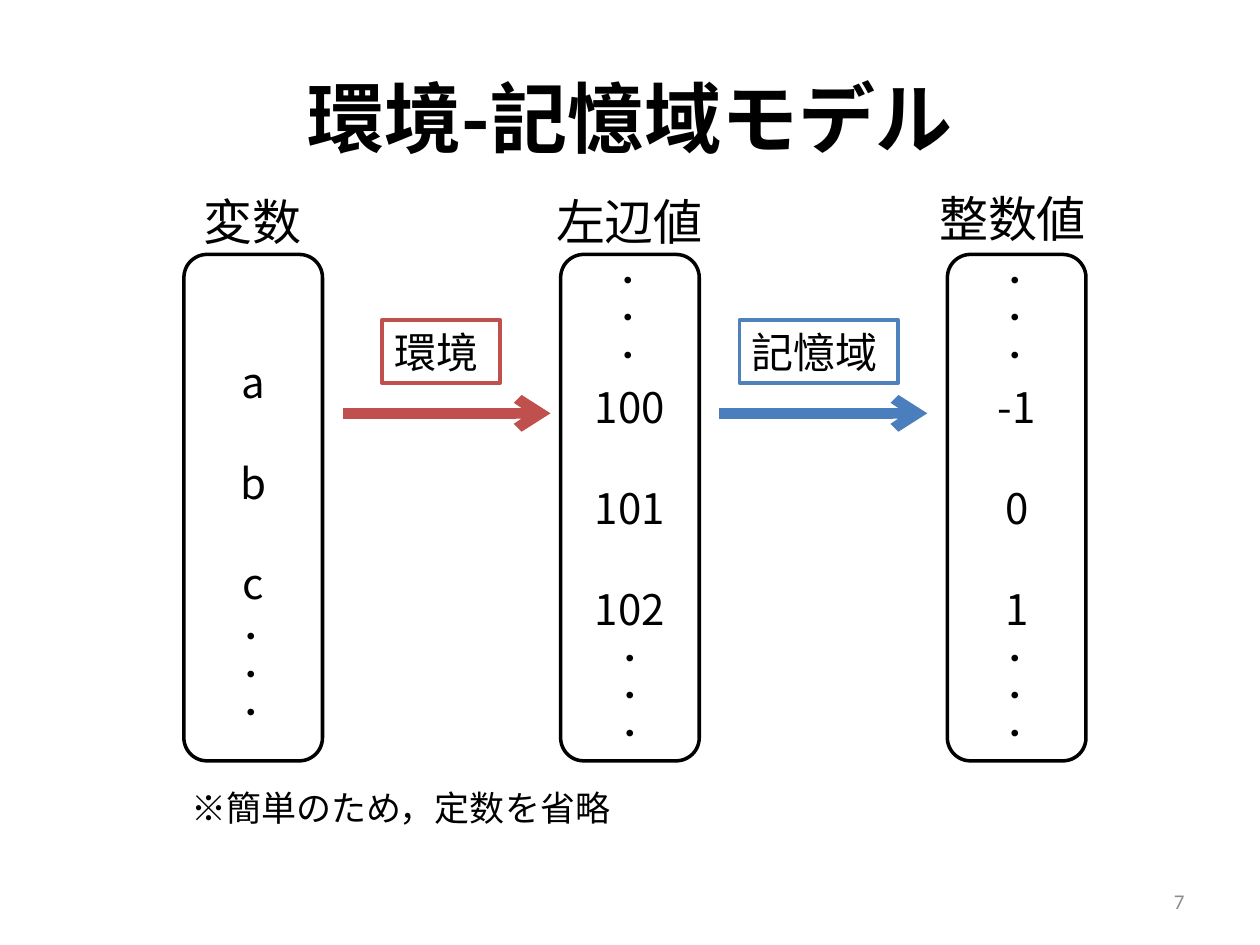
"""Build the environment-store model slide."""
from dataclasses import dataclass

from lxml import etree
from pptx import Presentation
from pptx.dml.color import RGBColor
from pptx.enum.shapes import MSO_CONNECTOR, MSO_SHAPE
from pptx.enum.text import MSO_ANCHOR, PP_ALIGN
from pptx.oxml.ns import qn
from pptx.util import Pt

LEFT, CENTER, RIGHT = PP_ALIGN.LEFT, PP_ALIGN.CENTER, PP_ALIGN.RIGHT
TOP, MIDDLE = MSO_ANCHOR.TOP, MSO_ANCHOR.MIDDLE
RECT, ROUNDED = MSO_SHAPE.RECTANGLE, MSO_SHAPE.ROUNDED_RECTANGLE
STRAIGHT = MSO_CONNECTOR.STRAIGHT


@dataclass(frozen=True)
class Theme:
    body_font: str = "Noto Sans CJK JP"
    number_font: str = "Calibri"
    black: str = "000000"
    white: str = "FFFFFF"
    gray: str = "8C8C8C"
    red: str = "C0504D"
    blue: str = "4F81BD"
    arrow_blue: str = "4B7EBC"
    title: float = 44
    heading: float = 28
    body: float = 24
    note: float = 20
    dots: float = 18
    number: float = 12
    outline: float = 2
    arrow: float = 6


@dataclass(frozen=True)
class Box:
    x: float
    y: float
    w: float
    h: float


@dataclass(frozen=True)
class Column:
    x: float
    heading: str
    heading_box: Box
    values: tuple[str, ...]
    dots: tuple[tuple[float, float], ...]
    lift: float = 0


@dataclass(frozen=True)
class Mapping:
    label: str
    box: Box
    arrow_x: float
    border: str
    arrow_color: str


THEME = Theme()
COLUMN_Y, COLUMN_W, COLUMN_H = 145.4, 79.2, 289.4
VALUE_GAP = 28.8
ARROW_Y, ARROW_W = 236.2, 118.8
DOTS_W, DOTS_H = 32.4, 72.7
DOTS = ("・",) * 3

COLUMNS = (
    Column(105.1, "変数", Box(82.1, 105.8, 124.6, 41), ("a", "b", "c"),
           ((127.4, 349.2),), VALUE_GAP),
    Column(320.4, "左辺値", Box(297.4, 105.8, 124.6, 41), ("100", "101", "102"),
           ((342.7, 145.4), (344.2, 361.4))),
    Column(541.4, "整数値", Box(513.4, 104.4, 130.3, 41), ("-1", "0", "1"),
           ((563.8, 145.4), (563.8, 361.4))),
)
MAPPINGS = (
    Mapping("環境", Box(218.2, 182.9, 67.7, 36), 195.8, THEME.red, THEME.red),
    Mapping("記憶域", Box(422.6, 182.9, 90.7, 36), 411.1, THEME.blue, THEME.arrow_blue),
)


def write(s, lines: tuple[str, ...], size: float, align=LEFT, anchor=TOP,
          color: str = THEME.black, font: str = THEME.body_font,
          bold: bool = False, gap: float = 0) -> None:
    """Fill a shape with equally styled paragraphs."""
    tf = s.text_frame
    tf.word_wrap = True
    tf.vertical_anchor = anchor
    for i, line in enumerate(lines):
        p = tf.add_paragraph() if i else tf.paragraphs[0]
        p.text = line
        p.alignment = align
        p.space_before = Pt(gap if i else 0)
        p.font.size = Pt(size)
        p.font.bold = bold
        p.font.color.rgb = RGBColor.from_string(color)
        p.font.name = font
        props = p._p.pPr.find(qn("a:defRPr"))
        etree.SubElement(props, qn("a:ea")).set("typeface", font)


def add_text(slide, box: Box, lines: tuple[str, ...], size: float, **style) -> None:
    """Add a text box."""
    s = slide.shapes.add_textbox(Pt(box.x), Pt(box.y), Pt(box.w), Pt(box.h))
    write(s, lines, size, **style)


def add_frame(slide, kind, box: Box, border: str):
    """Add a white shape with a coloured outline."""
    s = slide.shapes.add_shape(kind, Pt(box.x), Pt(box.y), Pt(box.w), Pt(box.h))
    s.shadow.inherit = False
    s.fill.solid()
    s.fill.fore_color.rgb = RGBColor.from_string(THEME.white)
    s.line.color.rgb = RGBColor.from_string(border)
    s.line.width = Pt(THEME.outline)
    return s


def add_column(slide, col: Column) -> None:
    """Draw a column of values with its heading and dots."""
    s = add_frame(slide, ROUNDED, Box(col.x, COLUMN_Y, COLUMN_W, COLUMN_H), THEME.black)
    write(s, col.values, THEME.body, CENTER, MIDDLE, gap=VALUE_GAP)
    s.text_frame.margin_bottom = Pt(3.6 + col.lift)
    add_text(slide, col.heading_box, (col.heading,), THEME.heading, align=CENTER)
    for x, y in col.dots:
        add_text(slide, Box(x, y, DOTS_W, DOTS_H), DOTS, THEME.dots)


def add_mapping(slide, m: Mapping) -> None:
    """Draw a labelled arrow between two columns."""
    s = add_frame(slide, RECT, m.box, m.border)
    write(s, (m.label,), THEME.body)
    c = slide.shapes.add_connector(
        STRAIGHT, Pt(m.arrow_x), Pt(ARROW_Y), Pt(m.arrow_x + ARROW_W), Pt(ARROW_Y))
    c.line.color.rgb = RGBColor.from_string(m.arrow_color)
    c.line.width = Pt(THEME.arrow)
    props = c._element.spPr
    etree.SubElement(props.find(qn("a:ln")), qn("a:tailEnd")).set("type", "arrow")
    etree.SubElement(props, qn("a:effectLst"))


def main() -> None:
    """Build and save the presentation."""
    prs = Presentation()
    prs.slide_width, prs.slide_height = Pt(720), Pt(540)
    slide = prs.slides.add_slide(prs.slide_layouts[6])
    add_text(slide, Box(36, 21.6, 648, 90), ("環境-記憶域モデル",), THEME.title,
             align=CENTER, anchor=MIDDLE, bold=True)
    for col in COLUMNS:
        add_column(slide, col)
    for m in MAPPINGS:
        add_mapping(slide, m)
    add_text(slide, Box(102.2, 445.7, 586.8, 31.7), ("※簡単のため，定数を省略",), THEME.note)
    add_text(slide, Box(516.2, 500.4, 167.8, 28.8), ("7",), THEME.number, align=RIGHT,
             anchor=MIDDLE, color=THEME.gray, font=THEME.number_font)
    prs.save("out.pptx")


if __name__ == "__main__":
    main()
